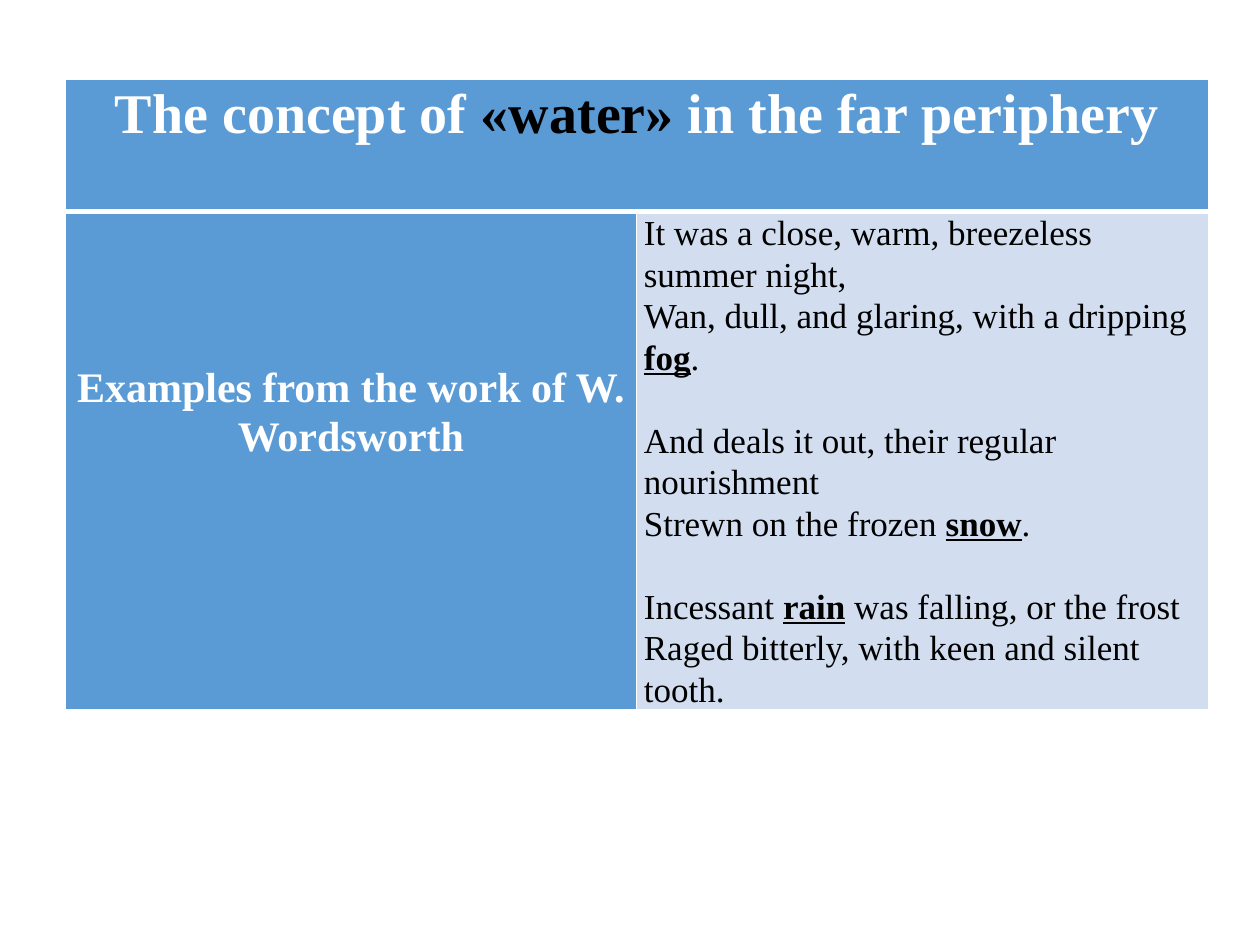
from dataclasses import dataclass

import pptx
import pptx.dml.color
import pptx.enum.text
import pptx.oxml
import pptx.oxml.ns
import pptx.util

FONT = "Times New Roman"
WHITE, BLACK, BLUE, PALE = "FFFFFF", "000000", "5B9BD5", "D2DEEF"
CENTER = pptx.enum.text.PP_ALIGN.CENTER
LEFT = pptx.enum.text.PP_ALIGN.LEFT
COLUMN_WIDTHS = (4.53, 4.54)
ROW_HEIGHTS = (1.05, 3.95)
STANZA_GAP = 23.7


@dataclass(frozen=True)
class Span:
    text: str
    color: str = BLACK
    bold: bool = False
    underline: bool = False


@dataclass(frozen=True)
class Line:
    spans: tuple[Span, ...]
    gap_before: float = 0


@dataclass(frozen=True)
class CellStyle:
    fill: str
    size: float
    align: pptx.enum.text.PP_ALIGN
    top_margin: float = 0


def rgb(value: str) -> pptx.dml.color.RGBColor:
    return pptx.dml.color.RGBColor.from_string(value)


def keyword(text: str) -> Span:
    return Span(text, bold=True, underline=True)


HEADING = (Line((
    Span("The concept of ", WHITE, True),
    Span("«water» ", BLACK, True),
    Span("in the far periphery", WHITE, True),
)),)
SOURCE = (Line((Span("Examples from the work of W. Wordsworth", WHITE, True),)),)
QUOTATIONS = (
    Line((Span("It was a close, warm, breezeless summer night,"),)),
    Line((Span("Wan, dull, and glaring, with a dripping "), keyword("fog"), Span("."))),
    Line((Span("And deals it out, their regular nourishment"),), STANZA_GAP),
    Line((Span("Strewn on the frozen "), keyword("snow"), Span("."))),
    Line((Span("Incessant "), keyword("rain"), Span(" was falling, or the frost")),
         STANZA_GAP),
    Line((Span("Raged bitterly, with keen and silent tooth."),)),
)


def set_borders(cell: pptx.table._Cell, top: float, bottom: float) -> None:
    properties = cell._tc.get_or_add_tcPr()
    widths = {"lnL": 1, "lnR": 1, "lnT": top, "lnB": bottom}
    for index, (side, points) in enumerate(widths.items()):
        border = pptx.oxml.parse_xml(
            f'<a:{side} {pptx.oxml.ns.nsdecls("a")} w="{pptx.util.Pt(points)}">'
            f'<a:solidFill><a:srgbClr val="{WHITE}"/></a:solidFill></a:{side}>')
        properties.insert(index, border)


def write_cell(cell: pptx.table._Cell, lines: tuple[Line, ...], style: CellStyle) -> None:
    cell.fill.solid()
    cell.fill.fore_color.rgb = rgb(style.fill)
    cell.margin_left = cell.margin_right = pptx.util.Inches(0.06)
    cell.margin_top = pptx.util.Inches(style.top_margin)
    cell.margin_bottom = 0
    cell.text_frame.text = "\n".join(
        "".join(span.text for span in line.spans) for line in lines)
    for para, line in zip(cell.text_frame.paragraphs, lines):
        para.alignment = style.align
        para.line_spacing = 1.07
        if line.gap_before:
            para.space_before = pptx.util.Pt(line.gap_before)
        para.runs[0].text = line.spans[0].text
        for span in line.spans[1:]:
            para.add_run().text = span.text
        for run, span in zip(para.runs, line.spans):
            run.font.name = FONT
            run.font.size = pptx.util.Pt(style.size)
            run.font.bold = span.bold
            run.font.underline = span.underline
            run.font.color.rgb = rgb(span.color)


def main() -> None:
    deck = pptx.Presentation()
    deck.slide_width = pptx.util.Inches(10)
    deck.slide_height = pptx.util.Inches(7.5)
    page = deck.slides.add_slide(deck.slide_layouts[6])
    table = page.shapes.add_table(
        len(ROW_HEIGHTS), len(COLUMN_WIDTHS),
        pptx.util.Inches(0.52), pptx.util.Inches(0.63),
        pptx.util.Inches(sum(COLUMN_WIDTHS)), pptx.util.Inches(sum(ROW_HEIGHTS))).table
    table.horz_banding = False
    for column, width in zip(table.columns, COLUMN_WIDTHS):
        column.width = pptx.util.Inches(width)
    for row, height in zip(table.rows, ROW_HEIGHTS):
        row.height = pptx.util.Inches(height)

    table.cell(0, 0).merge(table.cell(0, 1))
    write_cell(table.cell(0, 0), HEADING, CellStyle(BLUE, 32, CENTER))
    write_cell(table.cell(1, 0), SOURCE, CellStyle(BLUE, 24, CENTER, top_margin=1.19))
    write_cell(table.cell(1, 1), QUOTATIONS, CellStyle(PALE, 20, LEFT))
    for column in range(len(COLUMN_WIDTHS)):
        set_borders(table.cell(0, column), top=1, bottom=3)
        set_borders(table.cell(1, column), top=3, bottom=1)
    deck.save("out.pptx")


if __name__ == "__main__":
    main()
